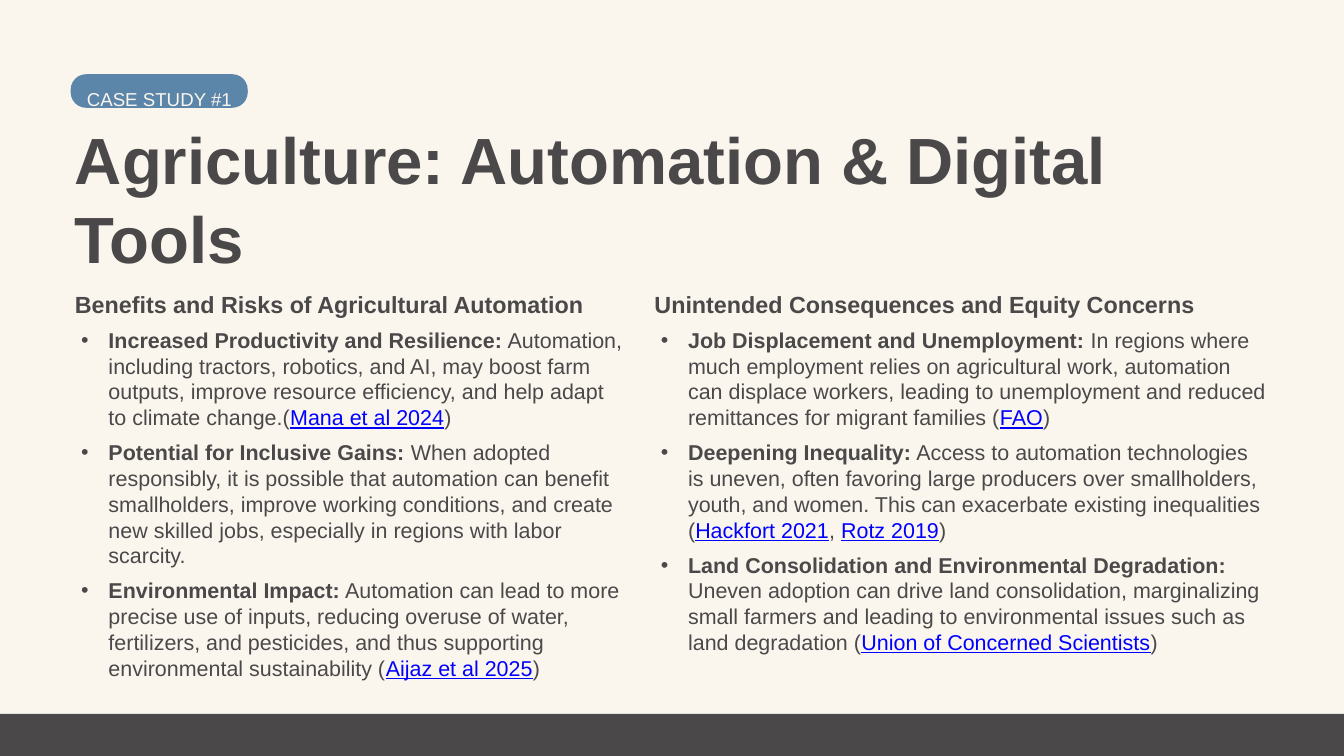
from lxml import etree
from pptx import Presentation
from pptx.dml.color import RGBColor
from pptx.enum.shapes import MSO_SHAPE
from pptx.oxml.ns import qn
from pptx.util import Emu, Pt

BOX = MSO_SHAPE.RECTANGLE
PILL = MSO_SHAPE.ROUNDED_RECTANGLE

CREAM = RGBColor(0xFA, 0xF6, 0xEE)
DARK = RGBColor(0x4A, 0x48, 0x49)
STEEL = RGBColor(0x5B, 0x85, 0xA9)
BLUE = RGBColor(0x00, 0x00, 0xFF)

SCALE = 9525  # EMU per px on a 1920 x 1080 slide

BOLD = {"bold": True}
PLAIN = {"bold": False}
CITE = {"underline": True, "color": BLUE}

COLUMNS = [
    (107, 783, "Benefits and Risks of Agricultural Automation", [
        [("Increased Productivity and Resilience:", BOLD),
         (" Automation, including tractors, robotics, and AI, may boost farm "
          "outputs, improve resource efficiency, and help adapt to climate "
          "change.(", PLAIN),
         ("Mana et al 2024", CITE), (")", PLAIN)],
        [("Potential for Inclusive Gains:", BOLD),
         (" When adopted responsibly, it is possible that automation can "
          "benefit smallholders, improve working conditions, and create new "
          "skilled jobs, especially in regions with labor scarcity.", PLAIN)],
        [("Environmental Impact:", BOLD),
         (" Automation can lead to more precise use of inputs, reducing "
          "overuse of water, fertilizers, and pesticides, and thus supporting "
          "environmental sustainability (", PLAIN),
         ("Aijaz et al 2025", CITE), (")", PLAIN)],
    ]),
    (935, 876, "Unintended Consequences and Equity Concerns", [
        [("Job Displacement and Unemployment:", BOLD),
         (" In regions where much employment relies on agricultural work, "
          "automation can displace workers, leading to unemployment and "
          "reduced remittances for migrant families (", PLAIN),
         ("FAO", CITE), (")", PLAIN)],
        [("Deepening Inequality:", BOLD),
         (" Access to automation technologies is uneven, often favoring large "
          "producers over smallholders, youth, and women. This can exacerbate "
          "existing inequalities (", PLAIN),
         ("Hackfort 2021", CITE), (", ", PLAIN),
         ("Rotz 2019", CITE), (")", PLAIN)],
        [("Land Consolidation and Environmental Degradation: ", BOLD),
         ("Uneven adoption can drive land consolidation, marginalizing small "
          "farmers and leading to environmental issues such as land "
          "degradation (", PLAIN),
         ("Union of Concerned Scientists", CITE), (")", PLAIN)],
    ]),
]


def px(*vals):
    return [Emu(val * SCALE) for val in vals]


def add_fill(slide, kind, area, color):
    shape = slide.shapes.add_shape(kind, *px(*area))
    shape.shadow.inherit = False
    shape.fill.solid()
    shape.fill.fore_color.rgb = color
    shape.line.fill.background()
    return shape


def add_bullet(par):
    props = par._p.get_or_add_pPr()
    left, hang = px(48, -39)
    props.set("marL", str(left))
    props.set("indent", str(hang))
    tint = etree.SubElement(props, qn("a:buClr"))
    etree.SubElement(tint, qn("a:srgbClr"), val=str(DARK))
    etree.SubElement(props, qn("a:buFont"), typeface="Arial")
    etree.SubElement(props, qn("a:buChar"), char="•")


def add_run(par, text, size, style):
    run = par.add_run()
    run.text = text
    form = {"name": "Arial", "size": Pt(size), "color": DARK, **style}
    run.font.color.rgb = form.pop("color")
    for key, val in form.items():
        setattr(run.font, key, val)


def add_text(slide, area, pars, size, lead=None, bullet=False):
    """Add paragraphs, each a list of (text, style); lead is the line spacing."""
    frame = slide.shapes.add_textbox(*px(*area)).text_frame
    form = {"word_wrap": True, "margin_left": 0, "margin_top": 0,
            "margin_right": 0, "margin_bottom": 0}
    for key, val in form.items():
        setattr(frame, key, val)
    for i, runs in enumerate(pars):
        par = frame.add_paragraph() if i else frame.paragraphs[0]
        if bullet:
            par.level = 1
            add_bullet(par)
        par.line_spacing = lead or Pt(size * 1.2)
        if i:
            par.space_before = Pt(10)
        for text, style in runs:
            add_run(par, text, size, style)


def add_column(slide, left, width, head, points):
    add_text(slide, (left, 467, width, 511), points, 23, bullet=True)
    add_text(slide, (left, 414, width, 40), [[(head, BOLD)]], 25)


def add_tag(slide, text):
    pill = add_fill(slide, PILL, (101, 106, 253, 48), STEEL)
    pill.adjustments[0] = 0.46
    add_text(slide, (124, 113, 896, 33), [[(text, {"color": CREAM})]], 20, 1.4)


def main():
    deck = Presentation()
    deck.slide_width, deck.slide_height = px(1920, 1080)
    slide = deck.slides.add_slide(deck.slide_layouts[6])
    slide.background.fill.solid()
    slide.background.fill.fore_color.rgb = CREAM

    add_fill(slide, BOX, (0, 1020, 1920, 60), DARK)
    for column in COLUMNS:
        add_column(slide, *column)
    title = "Agriculture: Automation & Digital Tools"
    add_text(slide, (107, 171, 1705, 227), [[(title, BOLD)]], 70)
    add_tag(slide, "CASE STUDY #1")
    deck.save("out.pptx")


if __name__ == "__main__":
    main()
